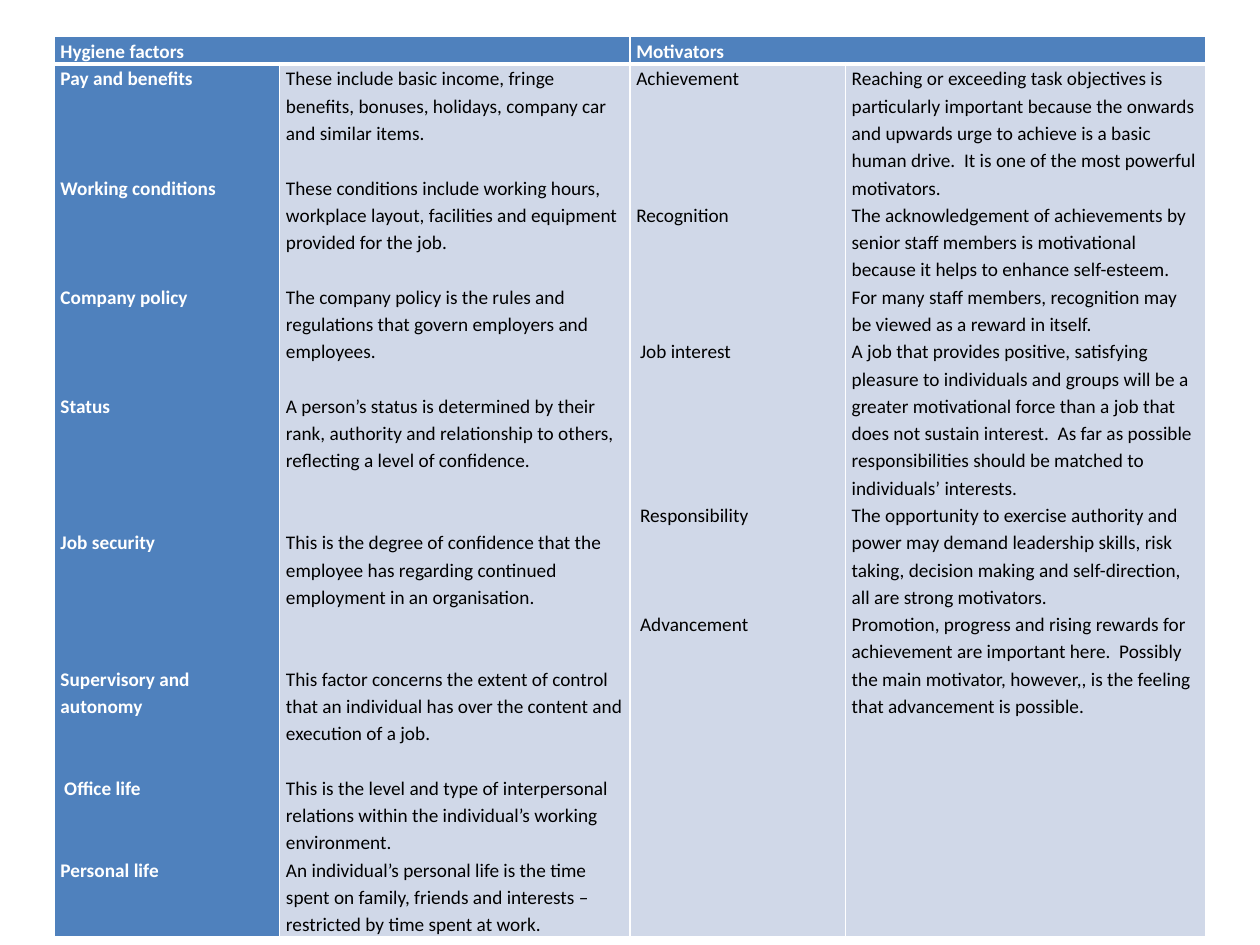
from lxml import etree
from pptx import Presentation
from pptx.dml.color import RGBColor
from pptx.oxml.ns import qn
from pptx.util import Inches, Pt

COLORS = {"blue": "4F81BD", "pale": "D0D8E8", "white": "FFFFFF", "black": "000000"}
FONT_SIZE = 11
LINE_SPACING = 1.15
LINE_PITCH = 15.6  # points from one text line to the next
COLUMN_WIDTHS = [1.79, 2.78, 1.71, 2.86]
ROW_HEIGHTS = [0.2, 6.73]

# Each factor: first line, name, lines of name, indent, description, lines of description
HYGIENE_FACTORS = [
    (0, "Pay and benefits", 1, 0,
     "These include basic income, fringe benefits, bonuses, holidays, company car "
     "and similar items.", 3),
    (4, "Working conditions", 1, 0,
     "These conditions include working hours, workplace layout, facilities and "
     "equipment provided for the job.", 3),
    (8, "Company policy", 1, 0,
     "The company policy is the rules and regulations that govern employers and "
     "employees.", 3),
    (12, "Status", 1, 0,
     "A person’s status is determined by their rank, authority and relationship to "
     "others, reflecting a level of confidence.", 3),
    (17, "Job security", 1, 0,
     "This is the degree of confidence that the employee has regarding continued "
     "employment in an organisation.", 3),
    (22, "Supervisory and autonomy", 2, 0,
     "This factor concerns the extent of control that an individual has over the "
     "content and execution of a job.", 3),
    (26, "Office life", 1, 0.03,
     "This is the level and type of interpersonal relations within the individual’s "
     "working environment.", 3),
    (29, "Personal life", 1, 0,
     "An individual’s personal life is the time spent on family, friends and "
     "interests – restricted by time spent at work.", 3),
]
MOTIVATORS = [
    (0, "Achievement", 1, 0,
     "Reaching or exceeding task objectives is particularly important because the "
     "onwards and upwards urge to achieve is a basic human drive.  It is one of the "
     "most powerful motivators.", 5),
    (5, "Recognition", 1, 0,
     "The acknowledgement of achievements by senior staff members is motivational "
     "because it helps to enhance self-esteem.  For many staff members, recognition "
     "may be viewed as a reward in itself.", 5),
    (10, "Job interest", 1, 0.03,
     "A job that provides positive, satisfying pleasure to individuals and groups "
     "will be a greater motivational force than a job that does not sustain "
     "interest.  As far as possible responsibilities should be matched to "
     "individuals’ interests.", 6),
    (16, "Responsibility", 1, 0.03,
     "The opportunity to exercise authority and power may demand leadership skills, "
     "risk taking, decision making and self-direction, all are strong motivators.", 4),
    (20, "Advancement", 1, 0.03,
     "Promotion, progress and rising rewards for achievement are important here.  "
     "Possibly the main motivator, however,, is the feeling that advancement is "
     "possible.", 4),
]
GROUPS = [("Hygiene factors", HYGIENE_FACTORS), ("Motivators", MOTIVATORS)]


def set_borders(cell, widths):
    properties = cell._tc.get_or_add_tcPr()
    for index, (side, width) in enumerate(widths.items()):
        line = etree.Element(qn(f"a:ln{side}"), w=str(Pt(width)))
        fill = etree.SubElement(line, qn("a:solidFill"))
        etree.SubElement(fill, qn("a:srgbClr"), val=COLORS["white"])
        properties.insert(index, line)


def format_cell(cell, fill, is_header):
    cell.margin_left = cell.margin_right = Inches(0.05)
    cell.margin_top = cell.margin_bottom = 0
    cell.fill.solid()
    cell.fill.fore_color.rgb = RGBColor.from_string(COLORS[fill])
    top, bottom = (1, 3) if is_header else (3, 1)
    set_borders(cell, {"L": 1, "R": 1, "T": top, "B": bottom})


def write_entries(cell, entries, color, bold):
    """Write (first line, text, line count, indent) entries at their lines."""
    next_line = 0
    for index, (first_line, text, line_count, indent) in enumerate(entries):
        frame = cell.text_frame
        paragraph = frame.add_paragraph() if index else frame.paragraphs[0]
        paragraph.text = text
        paragraph.line_spacing = LINE_SPACING
        paragraph.space_before = Pt((first_line - next_line) * LINE_PITCH)
        paragraph.font.name = "Calibri"
        paragraph.font.size = Pt(FONT_SIZE)
        paragraph.font.bold = bold
        paragraph.font.color.rgb = RGBColor.from_string(COLORS[color])
        if indent:
            paragraph._p.get_or_add_pPr().set("marL", str(Inches(indent)))
        next_line = first_line + line_count


presentation = Presentation()
presentation.slide_width = Inches(10)
presentation.slide_height = Inches(7.5)
slide = presentation.slides.add_slide(presentation.slide_layouts[6])

# Table grid
table = slide.shapes.add_table(
    len(ROW_HEIGHTS), len(COLUMN_WIDTHS), Inches(0.43), Inches(0.29),
    Inches(sum(COLUMN_WIDTHS)), Inches(sum(ROW_HEIGHTS))).table
for column, width in zip(table.columns, COLUMN_WIDTHS):
    column.width = Inches(width)
for row, height in zip(table.rows, ROW_HEIGHTS):
    row.height = Inches(height)
for column in range(len(COLUMN_WIDTHS)):
    format_cell(table.cell(0, column), "blue", True)
    format_cell(table.cell(1, column), "pale" if column else "blue", False)

# One header, name column and description column for each group
for group, (title, factors) in enumerate(GROUPS):
    left = 2 * group
    header = table.cell(0, left)
    header.merge(table.cell(0, left + 1))
    write_entries(header, [(0, title, 1, 0)], "white", True)
    names = [(start, name, lines, indent) for start, name, lines, indent, _, _ in factors]
    descriptions = [(start, text, lines, 0) for start, _, _, _, text, lines in factors]
    is_first = group == 0
    write_entries(table.cell(1, left), names, "white" if is_first else "black", is_first)
    write_entries(table.cell(1, left + 1), descriptions, "black", False)

presentation.save("out.pptx")
